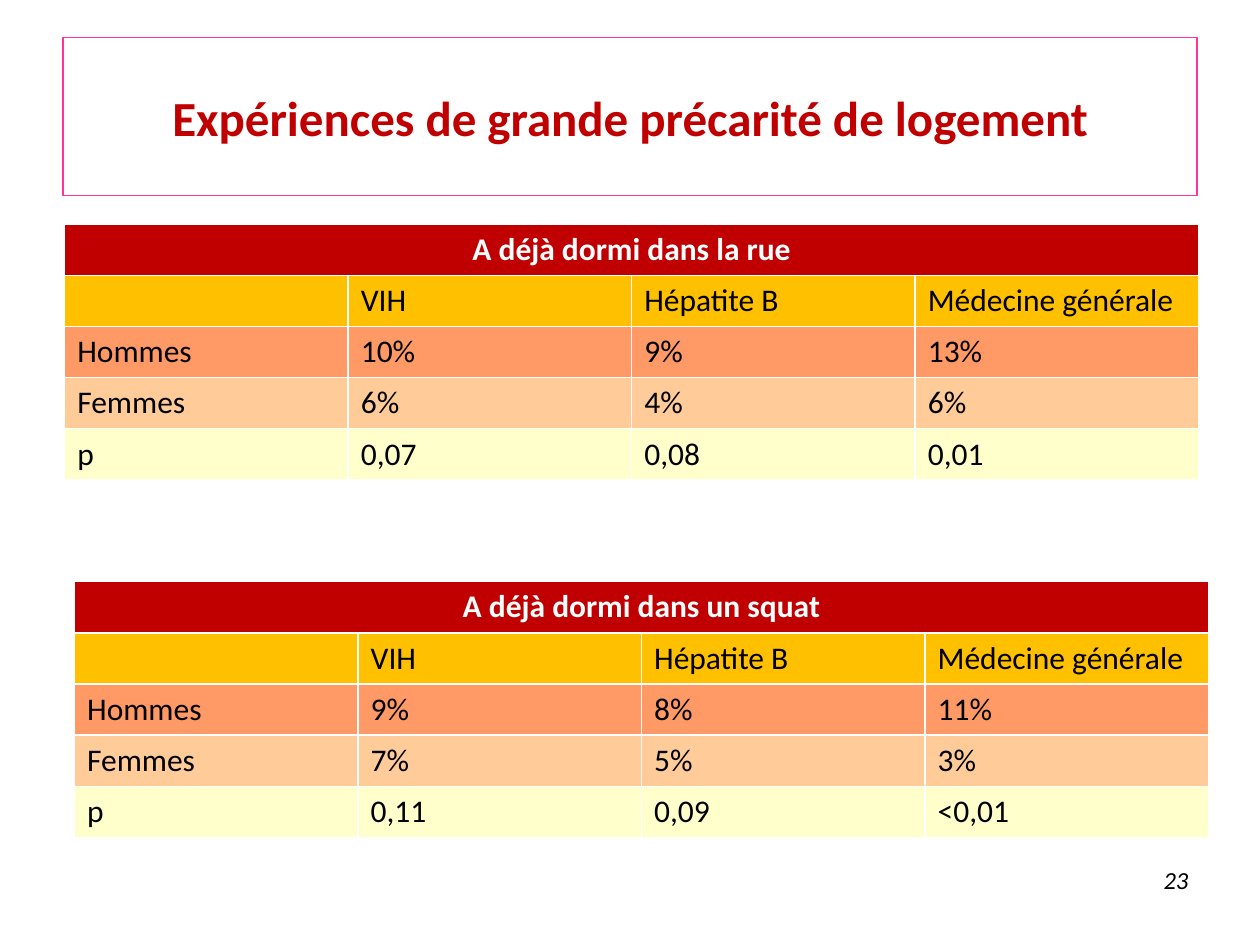
"""Build the slide on experiences of severe housing insecurity."""
from pptx import Presentation
from pptx.dml.color import RGBColor
from pptx.enum.text import MSO_ANCHOR, PP_ALIGN
from pptx.util import Pt

LEFT, CENTER, RIGHT = PP_ALIGN.LEFT, PP_ALIGN.CENTER, PP_ALIGN.RIGHT
MIDDLE = MSO_ANCHOR.MIDDLE
RED = RGBColor(0xC0, 0x00, 0x00)
PINK = RGBColor(0xFF, 0x33, 0x99)
GOLD = RGBColor(0xFF, 0xC0, 0x00)
ORANGE = RGBColor(0xFF, 0x99, 0x66)
PEACH = RGBColor(0xFF, 0xCC, 0x99)
CREAM = RGBColor(0xFF, 0xFF, 0xCC)
WHITE = RGBColor(0xFF, 0xFF, 0xFF)
BLACK = RGBColor(0x00, 0x00, 0x00)

ROW_FILLS = [RED, GOLD, ORANGE, PEACH, CREAM]
HEADINGS = ["", "VIH", "Hépatite B", "Médecine générale"]
COL_WIDTH, ROW_HEIGHT = 162, 29.25
TABLES = [
    (37, 128.1, "A déjà dormi dans la rue", [
        ["Hommes", "10%", "9%", "13%"],
        ["Femmes", "6%", "4%", "6%"],
        ["p", "0,07", "0,08", "0,01"],
    ]),
    (42.6, 332.4, "A déjà dormi dans un squat", [
        ["Hommes", "9%", "8%", "11%"],
        ["Femmes", "7%", "5%", "3%"],
        ["p", "0,11", "0,09", "<0,01"],
    ]),
]


def write(tf, text, size=18, color=BLACK, bold=False, italic=False, align=LEFT):
    """Write one formatted paragraph into a text frame."""
    p = tf.paragraphs[0]
    p.alignment = align
    r = p.add_run()
    r.text = text
    r.font.name = "Calibri"
    r.font.size = Pt(size)
    r.font.bold = bold
    r.font.italic = italic
    r.font.color.rgb = color


prs = Presentation()
prs.slide_width, prs.slide_height = Pt(720), Pt(540)
s = prs.slides.add_slide(prs.slide_layouts[5])

title = s.shapes.title
title.left, title.top, title.width, title.height = Pt(36), Pt(21.6), Pt(648), Pt(90)
title.line.color.rgb = PINK
title.line.width = Pt(0.75)
title.text_frame.vertical_anchor = MIDDLE
write(title.text_frame, "Expériences de grande précarité de logement",
      size=28, color=RED, bold=True, align=CENTER)

for left, top, heading, data in TABLES:
    rows = [[heading], HEADINGS] + data
    n_rows, n_cols = len(rows), len(HEADINGS)
    table = s.shapes.add_table(n_rows, n_cols, Pt(left), Pt(top),
                               Pt(COL_WIDTH * n_cols), Pt(ROW_HEIGHT * n_rows)).table
    table.cell(0, 0).merge(table.cell(0, n_cols - 1))
    for i, (row, fill) in enumerate(zip(rows, ROW_FILLS)):
        for j in range(n_cols):
            cell = table.cell(i, j)
            cell.fill.solid()
            cell.fill.fore_color.rgb = fill
        for j, text in enumerate(row):
            is_heading = i == 0
            write(table.cell(i, j).text_frame, text, bold=is_heading,
                  color=WHITE if is_heading else BLACK,
                  align=CENTER if is_heading else LEFT)

number = s.shapes.add_textbox(Pt(518.4), Pt(491), Pt(167.8), Pt(37.4))
number.text_frame.word_wrap = True
write(number.text_frame, "23", size=14, italic=True, align=RIGHT)

prs.save("out.pptx")
